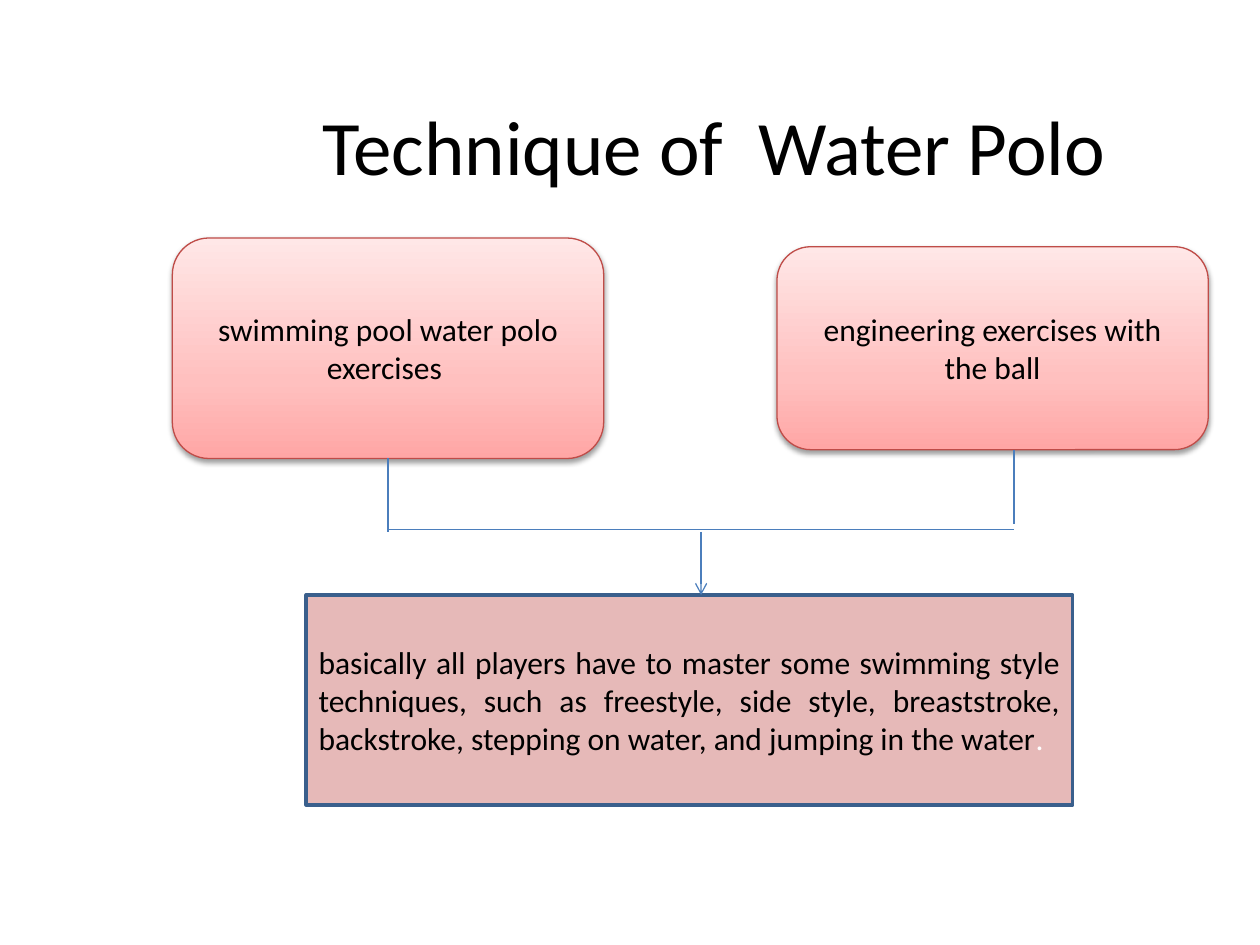
from copy import deepcopy

from lxml.etree import SubElement as Sub
from pptx import Presentation
from pptx.dml.color import RGBColor as RGB
from pptx.enum.shapes import MSO_CONNECTOR as Conn, MSO_SHAPE as Shape
from pptx.enum.text import MSO_ANCHOR as Anchor, PP_ALIGN as Align
from pptx.oxml.ns import qn
from pptx.util import Pt

BLACK = RGB(0, 0, 0)
WHITE = RGB(0xFF, 0xFF, 0xFF)
ROSE = RGB(0xE6, 0xB9, 0xB8)
RED = RGB(0xBF, 0x4C, 0x48)
NAVY = RGB(0x3A, 0x5F, 0x8C)
BLUE = RGB(0x4B, 0x7E, 0xBC)
FADE = [(0, RGB(0xFF, 0xA6, 0xA5)), (0.35, RGB(0xFF, 0xC0, 0xBF)),
        (1, RGB(0xFF, 0xE7, 0xE7))]


class Board:
    font = "Calibri"
    size = 18
    thin = 0.75

    def __init__(self, slide):
        self.slide = slide

    def place(self, shape, box):
        shape.left, shape.top, shape.width, shape.height = map(Pt, box)

    def style(self, run, size, color=BLACK):
        run.font.name, run.font.size = self.font, Pt(size)
        run.font.color.rgb = color

    def label(self, shape, text, align, size):
        frame = shape.text_frame
        frame.text = text
        frame.word_wrap = True
        frame.vertical_anchor = Anchor.MIDDLE
        para = frame.paragraphs[0]
        para.alignment = align
        self.style(para.runs[0], size)
        return para

    def title(self, text, box):
        shape = self.slide.shapes.title
        self.place(shape, box)
        self.label(shape, text, Align.CENTER, 44)

    def block(self, kind, box, line, width):
        shape = self.slide.shapes.add_shape(kind, *map(Pt, box))
        shape.line.color.rgb, shape.line.width = line, Pt(width)
        shape.shadow.inherit = False
        return shape

    def card(self, text, box):
        shape = self.block(Shape.ROUNDED_RECTANGLE, box, RED, self.thin)
        self.fade(shape)
        self.shade(shape)
        self.label(shape, text, Align.CENTER, self.size)
        return shape

    def fade(self, shape):
        fill = shape.fill
        fill.gradient()
        stops = shape.element.spPr.find(".//" + qn("a:gsLst"))
        stops.append(deepcopy(stops[0]))
        for stop, (pos, color) in zip(fill.gradient_stops, FADE):
            stop.position, stop.color.rgb = pos, color
        fill.gradient_angle = 90

    def shade(self, shape):
        effect = shape.element.spPr.find(qn("a:effectLst"))
        outer = Sub(effect, qn("a:outerShdw"), blurRad=str(Pt(3.1)),
                    dist=str(Pt(1.6)), dir="5400000", rotWithShape="0")
        color = Sub(outer, qn("a:srgbClr"), val=str(BLACK))
        Sub(color, qn("a:alpha"), val="38000")

    def note(self, text, end, box):
        shape = self.block(Shape.RECTANGLE, box, NAVY, 2)
        shape.fill.solid()
        shape.fill.fore_color.rgb = ROSE
        para = self.label(shape, text, Align.JUSTIFY, self.size)
        run = para.add_run()
        run.text = end
        self.style(run, self.size, WHITE)

    def link(self, start, end, source=None, arrow=False):
        line = self.slide.shapes.add_connector(
            Conn.STRAIGHT, *map(Pt, start + end))
        if source:
            line.begin_connect(source, 2)
        line.line.color.rgb, line.line.width = BLUE, Pt(self.thin)
        props = line.element.spPr
        if arrow:
            Sub(props.find(qn("a:ln")), qn("a:tailEnd"), type="arrow")
        Sub(props, qn("a:effectLst"))


def main():
    deck = Presentation()
    deck.slide_width, deck.slide_height = Pt(720), Pt(540)
    board = Board(deck.slides.add_slide(deck.slide_layouts[5]))

    # Title and the two kinds of exercise
    board.title("Technique of  Water Polo", (113, 37.5, 590.5, 90))
    pool = board.card("swimming pool water polo exercises ",
                      (98.5, 136, 246.5, 126))
    board.card("engineering exercises with the ball",
               (444, 141, 246.5, 116))

    # Shared outcome
    board.note("basically all players have to master some swimming style "
               "techniques, such as freestyle, side style, breaststroke, "
               "backstroke, stepping on water, and jumping in the water",
               ".", (175, 340, 438, 120))

    # Bracket that leads down to the outcome
    left, right, bar = 221.75, 579.5, 302.5
    mid = (left + right) / 2
    board.link((left, 262), (left, 304), source=pool)
    board.link((right, 257), (right, 299.5))
    board.link((left, bar), (right, bar))
    board.link((mid, 304), (mid, 340), arrow=True)

    deck.save("out.pptx")


if __name__ == "__main__":
    main()
